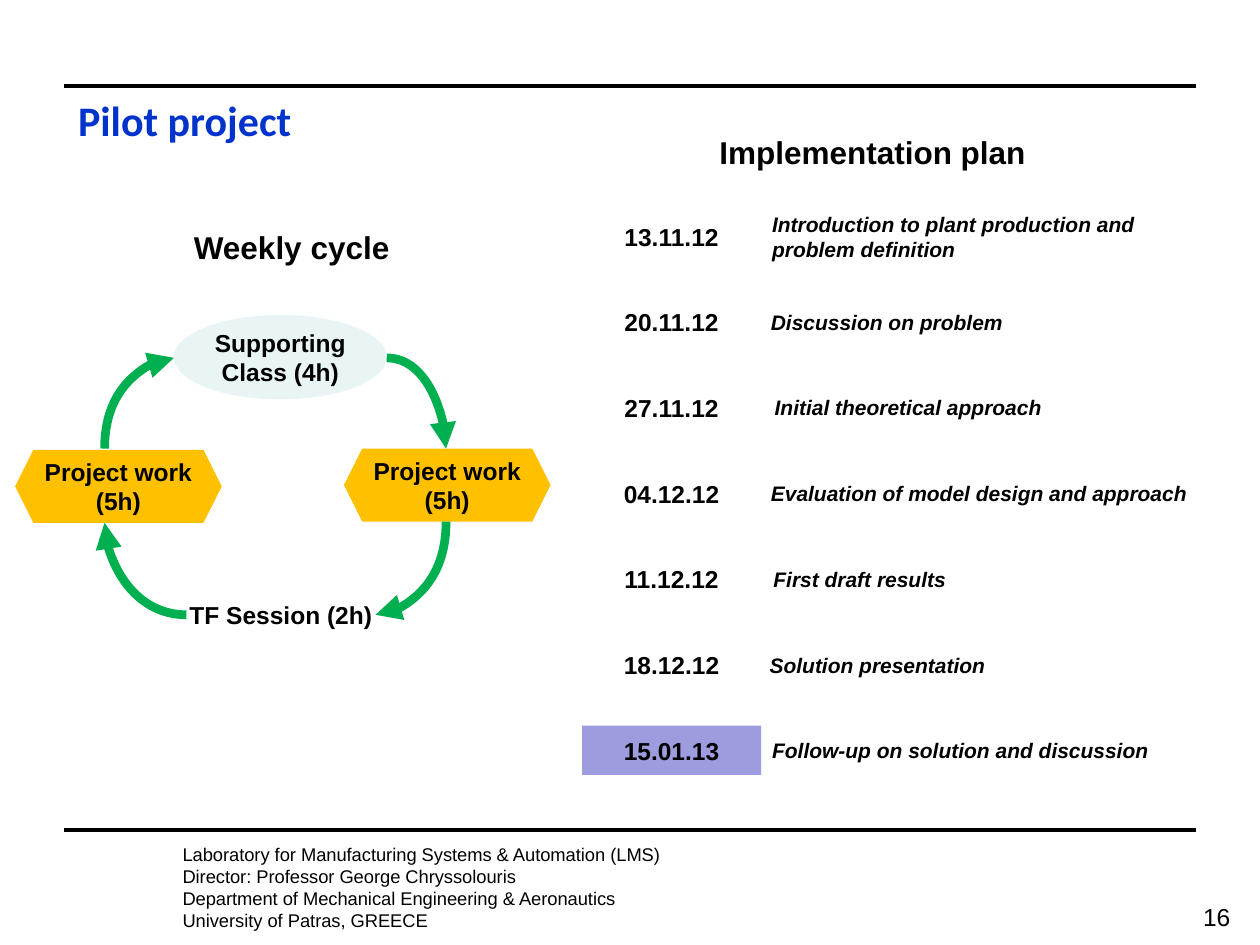
"""Build the pilot project slide with its weekly cycle and implementation plan."""
from lxml import etree
from pptx import Presentation
from pptx.dml.color import RGBColor
from pptx.enum.shapes import MSO_CONNECTOR, MSO_SHAPE
from pptx.enum.text import MSO_ANCHOR, PP_ALIGN
from pptx.oxml.ns import qn
from pptx.util import Inches, Pt

RECT, OVAL, HEXAGON = MSO_SHAPE.RECTANGLE, MSO_SHAPE.OVAL, MSO_SHAPE.HEXAGON
STRAIGHT, CURVE = MSO_CONNECTOR.STRAIGHT, MSO_CONNECTOR.CURVE
TOP, MIDDLE = MSO_ANCHOR.TOP, MSO_ANCHOR.MIDDLE
LEFT, CENTER = PP_ALIGN.LEFT, PP_ALIGN.CENTER
COLORS = {"text": "000000", "title": "0033CC", "white": "FFFFFF", "class": "E9F4F5",
          "work": "FFC000", "arrow": "00B050", "highlight": "9C9CDF"}


def write(sp, lines, size, align=LEFT, anchor=TOP, bold=False, italic=False,
          font="Arial", color="text", wrap=True, inset=None):
    tf = sp.text_frame
    tf.word_wrap, tf.vertical_anchor = wrap, anchor
    if inset is not None:
        tf.margin_left = tf.margin_right = tf.margin_top = tf.margin_bottom = Inches(inset)
    p = tf.paragraphs[0]
    p.alignment = align
    for i, line in enumerate(lines):
        if i:
            p.add_line_break()
        r = p.add_run()
        r.text = line
        r.font.name, r.font.size = font, Pt(size)
        r.font.bold, r.font.italic = bold, italic
        r.font.color.rgb = RGBColor.from_string(COLORS[color])


def connect(kind, x1, y1, x2, y2, color, width):
    c = s.shapes.add_connector(kind, Inches(x1), Inches(y1), Inches(x2), Inches(y2))
    c.line.color.rgb = RGBColor.from_string(COLORS[color])
    c.line.width = Pt(width)
    etree.SubElement(c._element.spPr, qn("a:effectLst"))
    return c


prs = Presentation()
prs.slide_width, prs.slide_height = Inches(10), Inches(7.5)
s = prs.slides.add_slide(prs.slide_layouts[5])

for y in (0.68, 6.59):
    connect(STRAIGHT, 0.51, y, 9.49, y, "text", 2.25)

title = s.shapes.title
title.left, title.top = Inches(0.52), Inches(0.7)
title.width, title.height = Inches(6.68), Inches(0.51)
write(title, ["Pilot project"], 24, bold=True, font="Calibri", color="title")

footer = s.shapes.add_textbox(Inches(1.35), Inches(6.64), Inches(4.58), Inches(0.81))
write(footer, ["Laboratory for Manufacturing Systems & Automation (LMS)",
               "Director: Professor George Chryssolouris",
               "Department of Mechanical Engineering & Aeronautics",
               "University of Patras, GREECE"], 10.5)
number = s.shapes.add_textbox(Inches(9.45), Inches(7.11), Inches(0.44), Inches(0.34))
write(number, ["16"], 14, wrap=False)

blocks = [
    (RECT, 1.38, 1.76, 1.87, 0.4, "white", "Weekly cycle", 18),
    (RECT, 5.28, 1.01, 3.29, 0.4, "white", "Implementation plan", 18),
    (OVAL, 1.38, 2.5, 1.69, 0.67, "class", "Supporting Class (4h)", 14),
    (RECT, 1.48, 4.68, 1.5, 0.39, "white", "TF Session (2h)", 14),
    (HEXAGON, 2.73, 3.56, 1.64, 0.58, "work", "Project work (5h)", 14),
    (HEXAGON, 0.12, 3.57, 1.64, 0.58, "work", "Project work (5h)", 14),
]
plan = [
    ("13.11.12", 6.03, "Introduction to plant production and problem definition"),
    ("20.11.12", 6.02, "Discussion on problem"),
    ("27.11.12", 6.05, "Initial theoretical approach"),
    ("04.12.12", 6.02, "Evaluation of model design and approach"),
    ("11.12.12", 6.04, "First draft results"),
    ("18.12.12", 6.01, "Solution presentation"),
    ("15.01.13", 6.03, "Follow-up on solution and discussion"),
]
row_top, row_pitch = 1.68, 0.68
for i, (date, x, topic) in enumerate(plan):
    y = row_top + i * row_pitch
    fill = "highlight" if i == len(plan) - 1 else "white"
    blocks.append((RECT, 4.62, y, 1.42, 0.39, fill, date, 14))
    tb = s.shapes.add_textbox(Inches(x), Inches(y - 0.06), Inches(3.6), Inches(0.51))
    write(tb, [topic], 12, anchor=MIDDLE, bold=True, italic=True)

for kind, x, y, w, h, fill, text, size in blocks:
    sp = s.shapes.add_shape(kind, Inches(x), Inches(y), Inches(w), Inches(h))
    sp.shadow.inherit = False
    sp.fill.solid()
    sp.fill.fore_color.rgb = RGBColor.from_string(COLORS[fill])
    sp.line.fill.background()
    write(sp, [text], size, CENTER, MIDDLE, bold=True, inset=0)

arrows = [
    (3.07, 2.84, 3.54, 3.56, False),
    (3.54, 4.14, 2.98, 4.88, True),
    (1.48, 4.88, 0.83, 4.15, False),
    (0.83, 3.56, 1.38, 2.84, True),
]
for x1, y1, x2, y2, starts_vertical in arrows:
    if starts_vertical:
        cx, cy, dx, dy = (x1 + x2) / 2, (y1 + y2) / 2, (x2 - x1) / 2, (y2 - y1) / 2
        x1, y1, x2, y2 = cx - dy, cy + dx, cx + dy, cy - dx
    c = connect(CURVE, x1, y1, x2, y2, "arrow", 5)
    c._element.spPr.find(qn("a:prstGeom")).set("prst", "curvedConnector2")
    if starts_vertical:
        c._element.spPr.find(qn("a:xfrm")).set("rot", "5400000")
    etree.SubElement(c.line._get_or_add_ln(), qn("a:tailEnd"), type="triangle")

prs.save("out.pptx")
